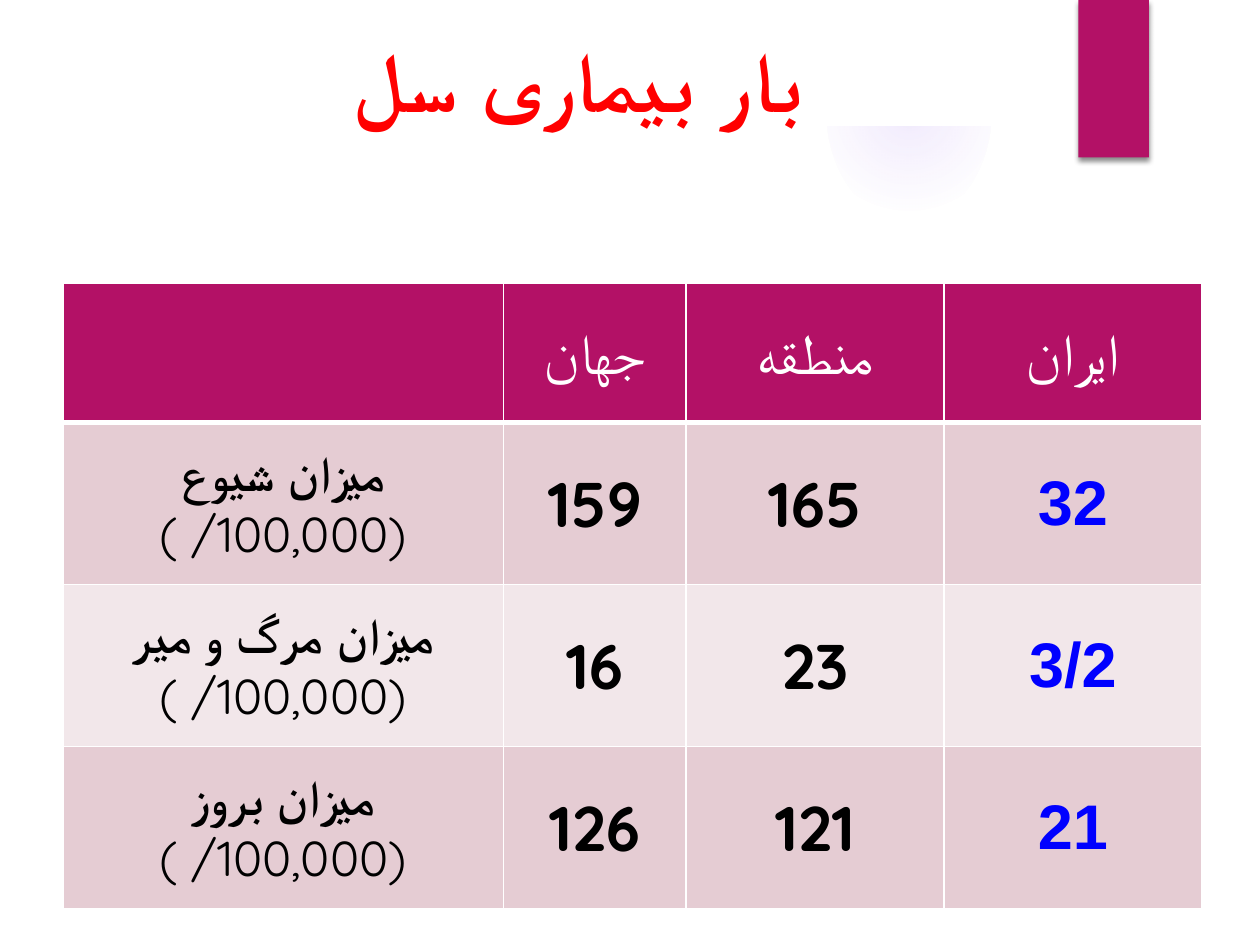
from dataclasses import dataclass
from lxml.etree import SubElement
from pptx import Presentation
from pptx.dml.color import RGBColor
from pptx.enum.shapes import MSO_SHAPE
from pptx.enum.text import MSO_ANCHOR, PP_ALIGN
from pptx.oxml import parse_xml
from pptx.oxml.ns import nsdecls, qn
from pptx.util import Inches, Pt

WIDTH, HEIGHT = 10, 7.5


@dataclass(frozen=True)
class Theme:
    white: str = "FFFFFF"
    black: str = "000000"
    accent: str = "B31166"
    glow: str = "9B6BF2"
    title: str = "FF0000"
    iran: str = "0000FF"
    bands: tuple = ("E5CCD3", "F2E7EA")
    font: str = "Quicksand"
    plain_font: str = "Arial"
    title_size: int = 48
    value_size: int = 36
    header_size: int = 32
    label_size: int = 28


THEME = Theme()
HEADERS = ("", "جهان", "منطقه", "ایران")
UNIT = "( /100,000)"
RATES = (
    ("میزان شیوع", "159", "165", "32"),
    ("میزان مرگ و میر", "16", "23", "3/2"),
    ("میزان بروز", "126", "121", "21"),
)
PANEL_EDGE = (
    (9.63, 2.04), (9.21, 2.13), (8.79, 2.2), (8.37, 2.27), (7.95, 2.32),
    (7.53, 2.37), (7.12, 2.41), (6.7, 2.44), (6.3, 2.46), (5.7, 2.47),
    (5.12, 2.48), (4.55, 2.47), (4.01, 2.45), (3.33, 2.41), (2.7, 2.36),
    (2.13, 2.3), (1.62, 2.24), (1.01, 2.15), (0.59, 2.08), (0.38, 2.04),
)
SWOOSH = (
    (7.01, 2.42), (7.6, 2.43), (8.6, 2.35), (9.68, 2.22), (9.61, 1.74),
    (9.27, 1.87), (8.92, 1.98), (8.57, 2.08), (8.23, 2.16), (7.9, 2.22),
    (7.57, 2.28), (7.26, 2.32), (6.97, 2.36),
)


def paint(target, color):
    target.fill.solid()
    target.fill.fore_color.rgb = RGBColor.from_string(color)


def add_run(paragraph, text, size, color, font=THEME.font, bold=False):
    paragraph.alignment = PP_ALIGN.CENTER
    run = paragraph.add_run()
    run.text = text
    run.font.size, run.font.bold, run.font.name = Pt(size), bold, font
    run.font.color.rgb = RGBColor.from_string(color)
    SubElement(run.font._element, qn("a:cs"), typeface=font)
    return run


def add_glow(slide, box, stops):
    """Ellipse fading outwards; stops are (position, opacity) in percent."""
    glow = slide.shapes.add_shape(MSO_SHAPE.OVAL, *map(Inches, box))
    glow.shadow.inherit = False
    glow.line.fill.background()
    colors = "".join(
        f'<a:gs pos="{position * 1000}"><a:srgbClr val="{THEME.glow}">'
        f'<a:alpha val="{opacity * 1000}"/></a:srgbClr></a:gs>'
        for position, opacity in stops)
    glow._element.spPr.find(qn("a:prstGeom")).addnext(parse_xml(
        f'<a:gradFill {nsdecls("a")} rotWithShape="1"><a:gsLst>{colors}</a:gsLst>'
        '<a:path path="circle"><a:fillToRect l="50000" t="50000" r="50000" b="50000"/>'
        '</a:path></a:gradFill>'))


def add_white_outline(slide, *contours):
    first, *others = contours
    builder = slide.shapes.build_freeform(*first[0], scale=Inches(1))
    builder.add_line_segments(first[1:], close=True)
    for contour in others:
        builder.move_to(*contour[0])
        builder.add_line_segments(contour[1:], close=True)
    outline = builder.convert_to_shape()
    outline.shadow.inherit = False
    outline.line.fill.background()
    paint(outline, THEME.white)
    return outline


def add_backdrop(slide):
    add_glow(slide, (7.06, 1.83, 2.31, 3.08), ((0, 7), (36, 6), (69, 0)))
    add_glow(slide, (6.56, 0.01, 1.31, 1.75), ((0, 14), (36, 7), (73, 0)))
    swoosh = add_white_outline(slide, SWOOSH)
    swoosh.rotation = 350.2
    swoosh_color = swoosh._element.spPr.find(qn("a:solidFill"))[0]
    SubElement(swoosh_color, qn("a:alpha"), val="20000")
    add_white_outline(slide, ((0.38, 7), (9.63, 7)) + PANEL_EDGE)
    side, top = 0.39, 0.52
    add_white_outline(
        slide,
        ((0, 0), (0, HEIGHT), (WIDTH, HEIGHT), (WIDTH, 0)),
        ((WIDTH - side, HEIGHT - top), (side, HEIGHT - top), (side, top), (WIDTH - side, top)))


def add_ribbon(slide, box):
    ribbon = slide.shapes.add_shape(MSO_SHAPE.RECTANGLE, *map(Inches, box))
    paint(ribbon, THEME.accent)
    ribbon.line.fill.background()
    ribbon._element.spPr.append(parse_xml(
        f'<a:effectLst {nsdecls("a")}><a:outerShdw blurRad="{Pt(3)}" dist="{Pt(2)}" '
        f'dir="5400000" rotWithShape="0"><a:srgbClr val="{THEME.black}">'
        '<a:alpha val="45000"/></a:srgbClr></a:outerShdw></a:effectLst>'))


def add_title(slide, box):
    title = slide.shapes.title
    title.left, title.top, title.width, title.height = map(Inches, box)
    slide.shapes._spTree.append(title._element)  # in front of the backdrop
    paragraph = title.text_frame.paragraphs[0]
    run = add_run(paragraph, "بار بیماری سل ", THEME.title_size, THEME.title,
                  THEME.plain_font, bold=True)
    run.font._element.set("spc", "50")
    paragraph._p.get_or_add_pPr().set("rtl", "1")


def style_cell(cell, color, bottom=1):
    cell.vertical_anchor = MSO_ANCHOR.MIDDLE
    properties = cell._tc.get_or_add_tcPr()
    for side, weight in (("L", 1), ("R", 1), ("T", 1), ("B", bottom)):
        border = SubElement(properties, qn(f"a:ln{side}"), w=str(Pt(weight)))
        SubElement(SubElement(border, qn("a:solidFill")), qn("a:srgbClr"), val=THEME.white)
    paint(cell, color)


def add_rate_table(slide, box):
    column_shares, row_shares = (3.5, 1.45, 2.05, 2.05), (1.11, 1.29, 1.29, 1.29)
    left, top, width, height = map(Inches, box)
    table = slide.shapes.add_table(
        len(row_shares), len(column_shares), left, top, width, height).table
    for column, share in zip(table.columns, column_shares):
        column.width = int(width * share / sum(column_shares))
    for row, share in zip(table.rows, row_shares):
        row.height = int(height * share / sum(row_shares))

    for cell, header in zip(table.rows[0].cells, HEADERS):
        style_cell(cell, THEME.accent, bottom=3)
        if header:
            add_run(cell.text_frame.paragraphs[0], header, THEME.header_size, THEME.white)

    value_looks = ((THEME.black, THEME.font),) * 2 + ((THEME.iran, THEME.plain_font),)
    for index, (label, *values) in enumerate(RATES):
        label_cell, *value_cells = table.rows[index + 1].cells
        for cell in (label_cell, *value_cells):
            style_cell(cell, THEME.bands[index % 2])
        label_frame = label_cell.text_frame
        add_run(label_frame.paragraphs[0], label, THEME.label_size, THEME.black, bold=True)
        add_run(label_frame.add_paragraph(), UNIT, THEME.label_size, THEME.black)
        for cell, value, look in zip(value_cells, values, value_looks):
            add_run(cell.text_frame.paragraphs[0], value, THEME.value_size, *look, bold=True)


def main():
    deck = Presentation()
    deck.slide_width, deck.slide_height = Inches(WIDTH), Inches(HEIGHT)
    slide = deck.slides.add_slide(deck.slide_layouts.get_by_name("Title Only"))
    add_backdrop(slide)
    add_ribbon(slide, (8.56, 0, 0.56, HEIGHT / 6))
    add_rate_table(slide, (0.5, 2.25, 9.04, 4.96))
    add_title(slide, (0.08, 0.17, 8.83, 0.91))
    deck.save("out.pptx")


if __name__ == "__main__":
    main()
